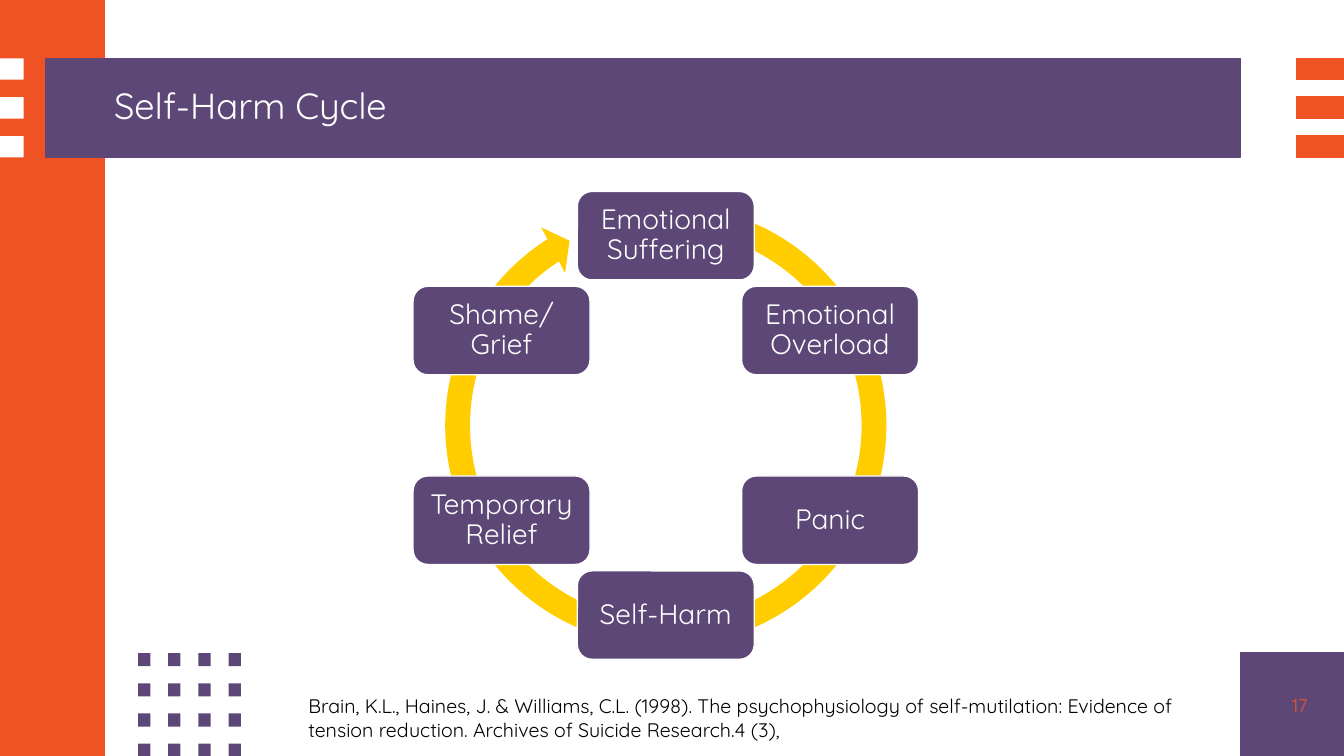
from dataclasses import dataclass
from itertools import product
from math import cos, radians, sin

from pptx import Presentation
from pptx.dml.color import RGBColor
from pptx.enum.shapes import MSO_SHAPE as Preset
from pptx.enum.text import MSO_ANCHOR as Anchor
from pptx.enum.text import MSO_AUTO_SIZE as AutoSize
from pptx.enum.text import PP_ALIGN as Align
from pptx.util import Cm, Pt


@dataclass(frozen=True)
class Theme:
    purple: str = "5D4777"
    orange: str = "EF5323"
    yellow: str = "FFCD00"
    white: str = "FFFFFF"
    black: str = "000000"
    font: str = "Quicksand"
    title_size: int = 26
    step_size: int = 20
    reference_size: int = 14
    number_size: int = 13
    line_width: int = 1


def assign(target, values):
    for name, value in values.items():
        setattr(target, name, value)


class SlideBuilder:
    """Draws on one slide; every place and size is in centimetres."""

    def __init__(self, slide, theme):
        self.slide = slide
        self.theme = theme

    def fill_text(self, shape, text, size, color, align=Align.LEFT, spacing=1.0, **frame_format):
        frame = shape.text_frame
        assign(frame, {"word_wrap": True, "auto_size": AutoSize.NONE, **frame_format})
        frame.text = text
        paragraph = frame.paragraphs[0]
        assign(paragraph, {"alignment": align, "line_spacing": spacing})
        font = paragraph.runs[0].font
        assign(font, {"name": self.theme.font, "size": Pt(size), "bold": False})
        font.color.rgb = RGBColor.from_string(color)

    def shape(self, left, top, width, height, fill, line=None, preset=Preset.RECTANGLE):
        shape = self.slide.shapes.add_shape(preset, Cm(left), Cm(top), Cm(width), Cm(height))
        shape.shadow.inherit = False
        shape.fill.solid()
        shape.fill.fore_color.rgb = RGBColor.from_string(fill)
        if line:
            shape.line.color.rgb = RGBColor.from_string(line)
            shape.line.width = Pt(self.theme.line_width)
        else:
            shape.line.fill.background()
        return shape

    def text(self, left, top, width, height, text, size, color, **text_format):
        box = self.slide.shapes.add_textbox(Cm(left), Cm(top), Cm(width), Cm(height))
        self.fill_text(box, text, size, color, **text_format)

    def title(self, left, top, width, height, text):
        """Place the title and bring it in front of the shapes drawn so far."""
        title = self.slide.shapes.title
        assign(title, {"left": Cm(left), "top": Cm(top), "width": Cm(width), "height": Cm(height)})
        self.fill_text(title, text, self.theme.title_size, self.theme.white,
                       vertical_anchor=Anchor.TOP)
        element = title.element
        element.getparent().append(element)

    def bars(self, left, width, fill, line=None):
        for row in range(3):
            self.shape(left, 1.47 + row * 0.98, width, 0.54, fill, line)

    def dots(self, left, top, step):
        for row, column in product(range(4), repeat=2):
            self.shape(left + column * step, top + row * step, 0.31, 0.33, self.theme.purple)

    def cycle(self, center_x, center_y, radius, steps):
        """Spread the steps clockwise from the top, over a circular arrow."""
        ring = 11.79
        arrow = self.shape(center_x - ring / 2, center_y - ring / 2, ring, ring,
                           self.theme.yellow, preset=Preset.CIRCULAR_ARROW)
        for index, value in enumerate((0.053, 3.126, 142.352, 171.229, 0.055)):
            arrow.adjustments[index] = value

        width, height = 4.46, 2.23
        margins = {f"margin_{side}": Cm(0.2) for side in ("left", "right", "top", "bottom")}
        for index, step in enumerate(steps):
            angle = radians(360 / len(steps) * index)
            box = self.shape(center_x + radius * sin(angle) - width / 2,
                             center_y - radius * cos(angle) - height / 2,
                             width, height, self.theme.purple, self.theme.white,
                             Preset.ROUNDED_RECTANGLE)
            self.fill_text(box, step, self.theme.step_size, self.theme.white, Align.CENTER, 0.9,
                           vertical_anchor=Anchor.MIDDLE, **margins)


def main():
    presentation = Presentation()
    assign(presentation, {"slide_width": Cm(33.87), "slide_height": Cm(19.05)})
    theme = Theme()
    slide = presentation.slides.add_slide(presentation.slide_layouts[5])
    builder = SlideBuilder(slide, theme)

    builder.shape(31.27, 16.45, 2.6, 2.6, theme.purple, theme.purple)
    builder.text(32.18, 17.25, 1.02, 1.02, "17", theme.number_size, theme.orange,
                 align=Align.RIGHT, vertical_anchor=Anchor.MIDDLE)
    builder.shape(0, 0, 2.62, 19.05, theme.orange, theme.orange)
    builder.bars(32.67, 1.2, theme.orange, theme.orange)
    builder.bars(0, 0.6, theme.white)
    builder.dots(3.48, 16.46, 0.76)
    builder.cycle(16.78, 10.72, 4.78, (
        "Emotional Suffering", "Emotional Overload", "Panic",
        "Self-Harm", "Temporary Relief", "Shame/ Grief",
    ))
    builder.shape(1.15, 1.48, 30.11, 2.48, theme.purple, theme.purple)
    builder.title(2.62, 1.96, 26.57, 1.37, "Self-Harm Cycle")
    builder.text(7.52, 17.37, 23.75, 1.45,
                 "Brain, K.L., Haines, J. & Williams, C.L. (1998). The psychophysiology of "
                 "self-mutilation: Evidence of tension reduction. "
                 "Archives of Suicide Research.4 (3),",
                 theme.reference_size, theme.black)
    presentation.save("out.pptx")


if __name__ == "__main__":
    main()
